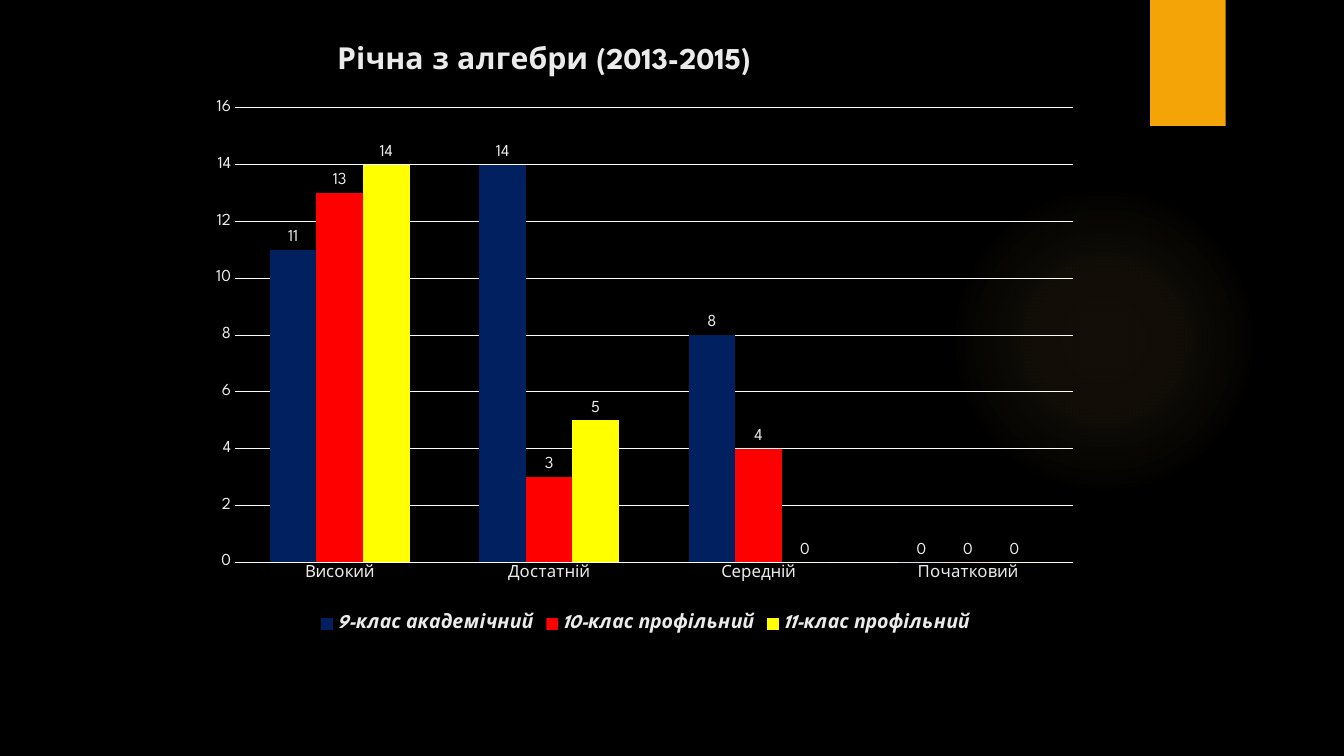
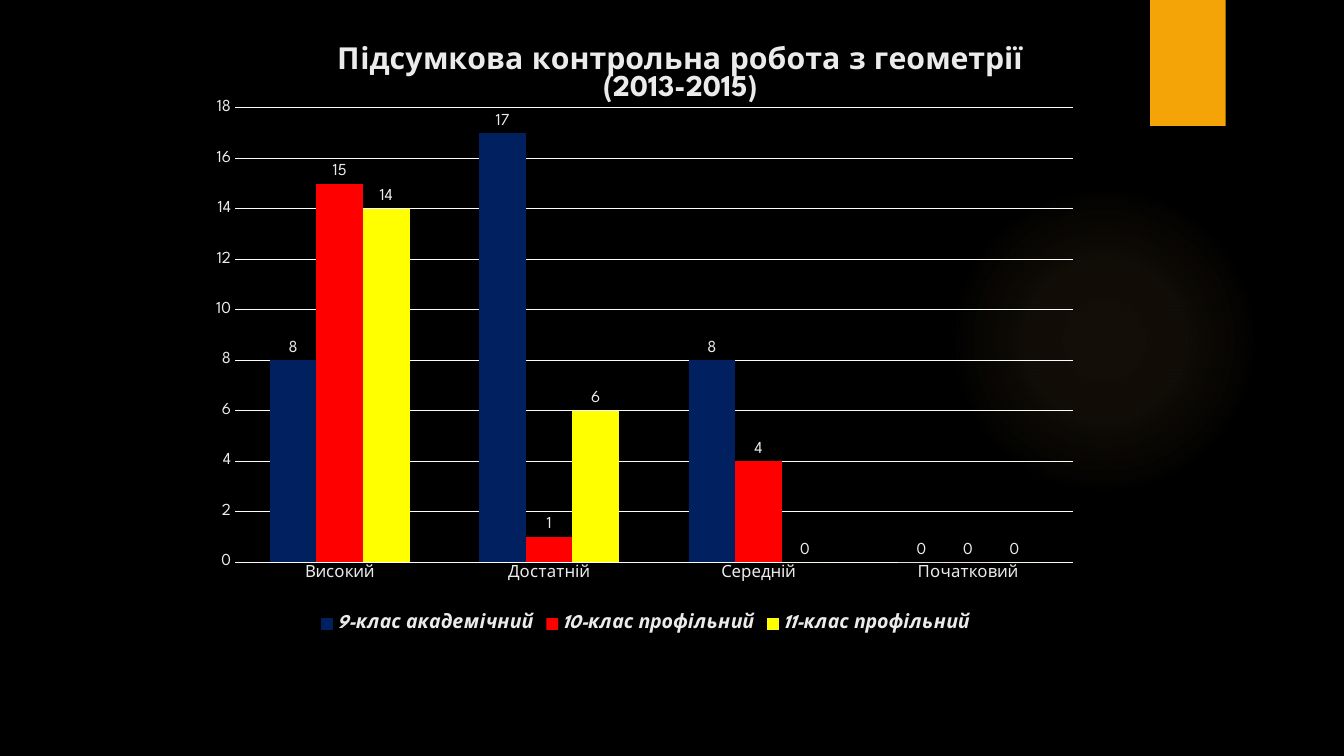
from lxml import etree
from pptx import Presentation
from pptx.chart.data import CategoryChartData
from pptx.dml.color import RGBColor
from pptx.enum.chart import (XL_CHART_TYPE, XL_LABEL_POSITION,
                             XL_LEGEND_POSITION, XL_TICK_MARK)
from pptx.enum.shapes import MSO_SHAPE
from pptx.oxml import parse_xml
from pptx.oxml.ns import nsdecls, qn
from pptx.util import Pt

FONT = "League Spartan"
BLACK, TEXT, GRID = "000000", "EBEBEB", "FCFCFC"
ORANGE, GLOW = "F5A408", "FAC96A"
LEVELS = ["Високий", "Достатній", "Середній", "Початковий"]
CLASSES = [("9-клас академічний", "002060"),
           ("10-клас профільний", "FF0000"),
           ("11-клас профільний", "FFFF00")]
CHART_BOX = (141, 28, 640, 427)
RESULTS = [
    ("Річна з алгебри (2013-2015)",
     [(11, 14, 8, 0), (13, 3, 4, 0), (14, 5, 0, 0)]),
    ("Підсумкова контрольна робота з геометрії (2013-2015)",
     [(8, 17, 8, 0), (15, 1, 4, 0), (14, 6, 0, 0)]),
]


def paint(color_format, color):
    color_format.rgb = RGBColor.from_string(color)


def fill_solid(fill, color):
    fill.solid()
    paint(fill.fore_color, color)


def style_font(font, size, bold=False, italic=False):
    font.name, font.size = FONT, Pt(size)
    font.bold, font.italic = bold, italic
    paint(font.color, TEXT)


def decorate_layout(layout, slide):
    """Draw the shared decoration, then hand it over to the layout."""
    fill_solid(layout.background.fill, BLACK)

    # Soft round glow
    glow = slide.shapes.add_shape(MSO_SHAPE.OVAL, Pt(677.5), Pt(132),
                                  Pt(222), Pt(222))
    glow.shadow.inherit = False
    glow.line.fill.background()
    glow.fill.background()
    stops = "".join(
        f'<a:gs pos="{position}000"><a:srgbClr val="{GLOW}">'
        f'<a:alpha val="{alpha}000"/></a:srgbClr></a:gs>'
        for position, alpha in [(0, 7), (36, 6), (69, 0)])
    gradient = parse_xml(
        f'<a:gradFill {nsdecls("a")}><a:gsLst>{stops}</a:gsLst>'
        '<a:path path="circle"><a:fillToRect l="50000" t="50000" '
        'r="50000" b="50000"/></a:path></a:gradFill>')
    no_fill = glow.element.spPr.find(qn("a:noFill"))
    glow.element.spPr.replace(no_fill, gradient)

    # Orange tab with a soft shadow
    tab = slide.shapes.add_shape(MSO_SHAPE.RECTANGLE, Pt(821.5), Pt(0),
                                 Pt(54), Pt(90))
    tab.shadow.inherit = False
    fill_solid(tab.fill, ORANGE)
    tab.line.fill.background()
    effects = tab.element.spPr.find(qn("a:effectLst"))
    effects.append(parse_xml(
        f'<a:outerShdw {nsdecls("a")} blurRad="{Pt(3)}" dist="{Pt(2)}" '
        f'dir="5400000" rotWithShape="0"><a:srgbClr val="{BLACK}">'
        '<a:alpha val="45000"/></a:srgbClr></a:outerShdw>'))

    for part in (glow, tab):
        layout.shapes.element.append(part.element)


def manual_layout(x, y, size=None):
    """Return a chart layout in fractions of the chart box."""
    values = [("xMode", "edge"), ("yMode", "edge"), ("x", x), ("y", y)]
    if size:
        values.insert(0, ("layoutTarget", "inner"))
        values += [("w", size[0]), ("h", size[1])]
    layout = parse_xml(f'<c:layout {nsdecls("c")}><c:manualLayout/></c:layout>')
    for tag, value in values:
        etree.SubElement(layout[0], qn(f"c:{tag}")).set("val", str(value))
    return layout


def set_title(chart, text):
    chart.has_title = True
    title = chart.chart_title
    run = title.text_frame.paragraphs[0].add_run()
    run.text = text
    style_font(run.font, 21.6, bold=True)
    title.include_in_layout = False
    element = title.format.element if hasattr(title.format, "element") else title.element
    for old in element.findall(qn("c:layout")):
        element.remove(old)
    element.find(qn("c:tx")).addnext(manual_layout(0.15, 0))


def style_axes(chart):
    for axis in (chart.category_axis, chart.value_axis):
        axis.major_tick_mark = axis.minor_tick_mark = XL_TICK_MARK.NONE
        style_font(axis.tick_labels.font, 12)
    chart.value_axis.format.line.fill.background()
    chart.value_axis.has_major_gridlines = True
    for line in (chart.category_axis.format.line,
                 chart.value_axis.major_gridlines.format.line):
        line.width = Pt(0.75)
        fill_solid(line.fill, GRID)


def add_results_chart(slide, box, title, results):
    data = CategoryChartData(number_format="General")
    data.categories = LEVELS
    for (name, _), counts in zip(CLASSES, results):
        data.add_series(name, counts)
    chart = slide.shapes.add_chart(XL_CHART_TYPE.COLUMN_CLUSTERED,
                                   *(Pt(n) for n in box), data).chart
    style_font(chart.font, 10)
    set_title(chart, title)
    style_axes(chart)

    # Columns and their values
    plot = chart.plots[0]
    plot.gap_width, plot.overlap = 150, 0
    plot.vary_by_categories = False
    for series, (_, color) in zip(plot.series, CLASSES):
        fill_solid(series.format.fill, color)
        series.invert_if_negative = False
        labels = series.data_labels
        labels.show_value = True
        labels.position = XL_LABEL_POSITION.OUTSIDE_END
        style_font(labels.font, 12)
    plot_area = chart.element.find(".//" + qn("c:plotArea"))
    for old in plot_area.findall(qn("c:layout")):
        plot_area.remove(old)
    plot_area.insert(0, manual_layout(0.042, 0.115, (0.935, 0.76)))

    # Legend
    chart.has_legend = True
    chart.legend.position = XL_LEGEND_POSITION.BOTTOM
    chart.legend.include_in_layout = False
    style_font(chart.legend.font, 14, bold=True, italic=True)


def main():
    deck = Presentation()
    deck.slide_width, deck.slide_height = Pt(960), Pt(540)
    layout = deck.slide_layouts[6]
    for number, (title, results) in enumerate(RESULTS):
        slide = deck.slides.add_slide(layout)
        if number == 0:
            decorate_layout(layout, slide)
        add_results_chart(slide, CHART_BOX, title, results)
    deck.save("out.pptx")


if __name__ == "__main__":
    main()
